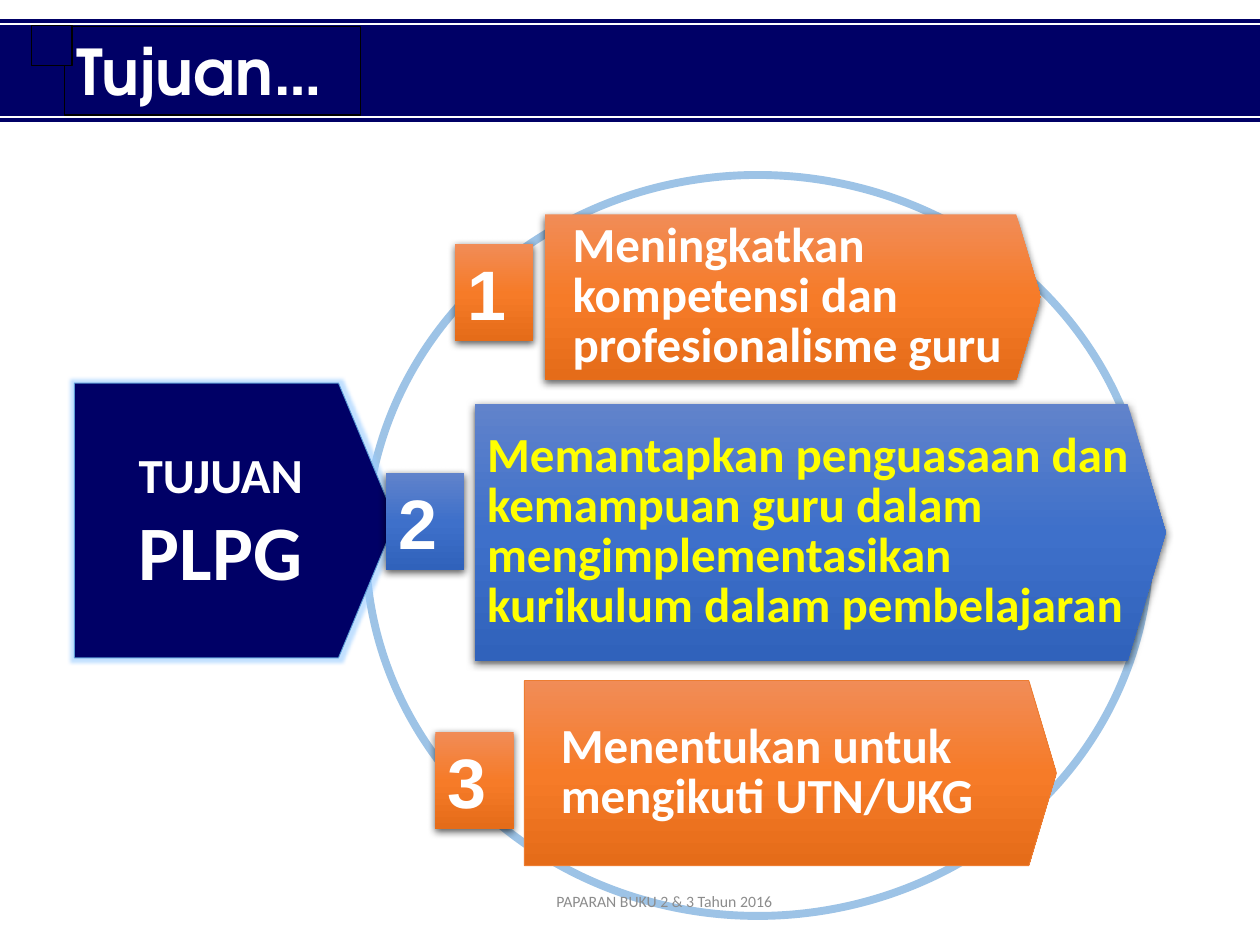
from lxml import etree
from pptx import Presentation
from pptx.dml.color import RGBColor
from pptx.enum import shapes, text
from pptx.oxml import parse_xml
from pptx.oxml.ns import nsdecls, qn
from pptx.util import Pt

NAVY, WHITE, YELLOW = "000066", "FFFFFF", "FFFF00"
ORANGE = ("F18C57", "F67B28", "E56C19")
BLUE = ("6183CB", "3E70CA", "3062BB")
SHADOW = ('<a:outerShdw blurRad="57150" dist="19050" dir="5400000" algn="ctr" rotWithShape="0">'
          '<a:srgbClr val="000000"><a:alpha val="63000"/></a:srgbClr></a:outerShdw>')
GLOW = '<a:glow rad="50800"><a:srgbClr val="99CCFF"><a:alpha val="60000"/></a:srgbClr></a:glow>'
RECT = shapes.MSO_SHAPE.RECTANGLE
PLATE = shapes.MSO_SHAPE.PENTAGON
LEFT, CENTER = text.PP_ALIGN.LEFT, text.PP_ALIGN.CENTER
TOP, MIDDLE = text.MSO_ANCHOR.TOP, text.MSO_ANCHOR.MIDDLE


def rgb(value):
    return RGBColor.from_string(value)


def set_line(line, color, width):
    line.color.rgb = rgb(color)
    line.width = Pt(width)


def set_effect(sp, effect=""):
    props = sp._element.spPr
    for old in props.findall(qn("a:effectLst")):
        props.remove(old)
    props.append(parse_xml(f'<a:effectLst {nsdecls("a")}>{effect}</a:effectLst>'))


def set_gradient(sp, colors):
    """Three evenly spaced stops, from top to bottom."""
    sp.fill.gradient()
    grad = sp._element.spPr.find(qn("a:gradFill"))
    stops = grad.find(qn("a:gsLst"))
    for stop in list(stops):
        stops.remove(stop)
    for i, color in enumerate(colors):
        stop = etree.SubElement(stops, qn("a:gs"), pos=str(i * 50000))
        etree.SubElement(stop, qn("a:srgbClr"), val=color)
    sp.fill.gradient_angle = 270


def add_box(s, kind, box, fill=None, line=None, effect="", adj=None):
    sp = s.shapes.add_shape(kind, *map(Pt, box))
    if adj is not None:
        sp.adjustments[0] = adj
    if fill is None:
        sp.fill.background()
    elif isinstance(fill, tuple):
        set_gradient(sp, fill)
    else:
        sp.fill.solid()
        sp.fill.fore_color.rgb = rgb(fill)
    if line:
        set_line(sp.line, *line)
    else:
        sp.line.fill.background()
    set_effect(sp, effect)
    return sp


def add_text(sp, lines, font="Calibri", color=WHITE, bold=True, align=LEFT,
             anchor=MIDDLE, spacing=None, indent=0, wrap=True):
    """Write (words, size) pairs, one paragraph each."""
    tf = sp.text_frame
    tf.word_wrap = wrap
    tf.vertical_anchor = anchor
    for i, (words, size) in enumerate(lines):
        p = tf.add_paragraph() if i else tf.paragraphs[0]
        p.alignment = align
        if spacing:
            p.line_spacing = spacing
        if indent:
            p._p.get_or_add_pPr().set("marL", str(Pt(indent)))
        r = p.add_run()
        r.text = words
        r.font.name, r.font.size, r.font.bold = font, Pt(size), bold
        r.font.color.rgb = rgb(color)


def add_goal(s, box, words, fill, color=WHITE, indent=0, line=None, effect=SHADOW):
    sp = add_box(s, PLATE, box, fill, line, effect, adj=0.149)
    add_text(sp, [(words, 28)], color=color, spacing=0.85, indent=indent)


def add_number(s, left, top, number, fill):
    sp = add_box(s, RECT, (left, top, 44.8, 55.7), fill, effect=SHADOW)
    add_text(sp, [(number, 40)], font="Arial", anchor=TOP)


def add_topic(s, box):
    sp = add_box(s, PLATE, box, NAVY, ("5B9BD5", 0.5), GLOW, adj=0.208)
    add_text(sp, [("TUJUAN", 28), ("PLPG", 44)], align=CENTER)


def add_footer(s, box):
    tb = s.shapes.add_textbox(*map(Pt, box))
    add_text(tb, [("PAPARAN BUKU 2 & 3 Tahun 2016", 9)], color="8C8C8C",
             bold=False, align=CENTER)


def add_header(s, box):
    left, top, width, height = box
    # Band, title and corner square
    add_box(s, RECT, box, NAVY, (NAVY, 1))
    title = add_box(s, RECT, (left + 36.9, top, 169.2, height), NAVY, ("000000", 0.75))
    add_text(title, [("Tujuan…", 36)], font="TeX Gyre Adventor", anchor=TOP, wrap=False)
    add_box(s, RECT, (left + 18.2, top - 0.4, 23, 23), NAVY, ("000000", 0.75))
    # Rules above and below the band
    for y in (top + height + 2.8, top - 3):
        rule = s.shapes.add_connector(shapes.MSO_CONNECTOR.STRAIGHT,
                                      Pt(left), Pt(y), Pt(left + width), Pt(y))
        set_line(rule.line, NAVY, 2.25)
        set_effect(rule)


def main():
    prs = Presentation()
    prs.slide_width, prs.slide_height = Pt(720), Pt(540)
    s = prs.slides.add_slide(prs.slide_layouts[6])

    # Ring behind the goals
    add_box(s, shapes.MSO_SHAPE.OVAL, (209, 100, 448, 423.4), line=("9DC3E6", 4.5))

    # Goals
    add_goal(s, (311.2, 122.6, 283.6, 94.4),
             "Meningkatkan kompetensi dan profesionalisme guru", ORANGE, indent=8.9)
    add_goal(s, (271.3, 230.7, 394.9, 147),
             "Memantapkan penguasaan dan kemampuan guru dalam mengimplementasikan "
             "kurikulum dalam pembelajaran", BLUE, YELLOW)
    add_goal(s, (299.7, 388.9, 304, 105.8), "Menentukan untuk mengikuti UTN/UKG",
             ORANGE, indent=13.7, line=("ED7D31", 0.5), effect="")

    # Topic, goal numbers and footer
    add_topic(s, (42.5, 218.9, 183.6, 157))
    add_number(s, 260, 139.4, "1", ORANGE)
    add_number(s, 220.5, 270.2, "2", BLUE)
    add_footer(s, (257.8, 500.4, 243.4, 28.8))
    add_number(s, 248.8, 418.3, "3", ORANGE)

    add_header(s, (0, 15, 720, 50.8))
    prs.save("out.pptx")


if __name__ == "__main__":
    main()
